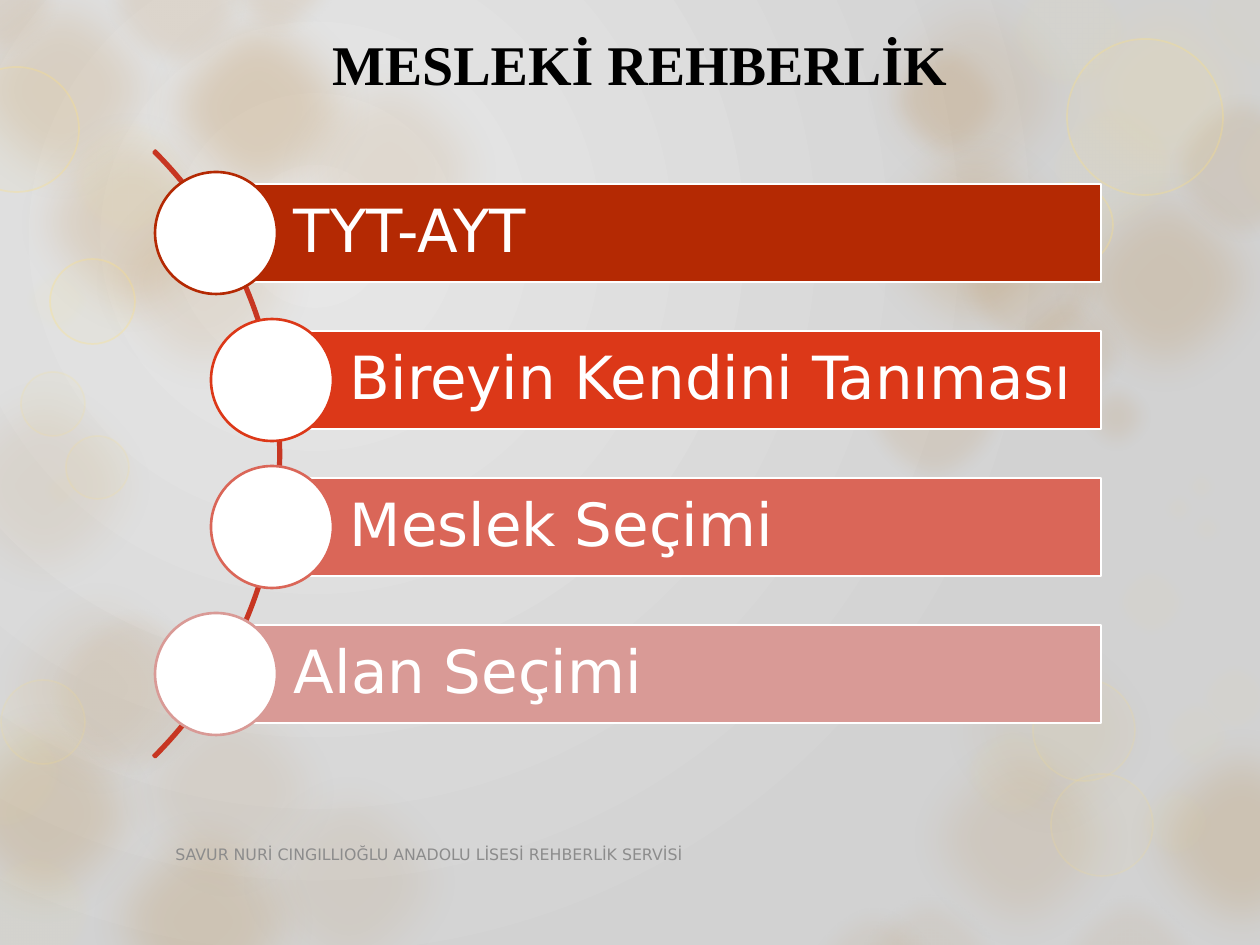
from lxml import etree
from pptx import Presentation
from pptx.dml.color import RGBColor
from pptx.enum.shapes import MSO_SHAPE
from pptx.enum.text import MSO_ANCHOR, PP_ALIGN
from pptx.oxml import parse_xml
from pptx.oxml.ns import qn
from pptx.util import Pt

EMU_PER_PX = 914400 / 126
DRAWING_NS = "http://schemas.openxmlformats.org/drawingml/2006/main"
BODY_FONT = "DejaVu Sans"
COLORS = {
    "light": "E7E7E7", "dark": "D2D2D2", "brown": "AE6D11", "gold": "FFE281",
    "white": "FFFFFF", "black": "000000", "footer": "8C8C8C", "arc": "C73622",
    "rust": "B42903", "red": "DC3818", "coral": "DA6658", "rose": "D99A96",
}
TOPICS = [
    ("TYT-AYT", "rust", 216),
    ("Bireyin Kendini Tanıması", "red", 272),
    ("Meslek Seçimi", "coral", 272),
    ("Alan Seçimi", "rose", 216),
]
BAR_RIGHT, BAR_HEIGHT, FIRST_CENTER, TOPIC_STEP, DISC = 1101, 98, 233, 147, 122

LARGE_GLOWS = [
    (-32, 557, 8), (72, 151, 10), (258, 39, 10), (72, 790, 16), (-70, -41, 14),
    (127, -23, 20), (0, 91, 15), (843, -37, 10), (1033, 151, 15),
    (1110, 708, 16), (919, 601, 5), (-86, 682, 16), (97, 660, 8),
    (843, 108, 15), (890, 708, 10), (218, 751, 8), (-87, 355, 8),
]
SMALL_GLOWS = [
    (850, 330, 168, 10), (1157, 82, 173, 10), (874, 29, 144, 10),
    (948, 200, 168, 10), (994, 282, 144, 10), (1067, 367, 100, 10),
    (94, -82, 165, 10), (207, -93, 143, 10), (-72, -73, 144, 10),
    (38, 596, 193, 6), (795, 895, 160, 6), (844, 883, 171, 6),
    (1045, 883, 168, 6),
]
GOLD_GLOWS = [
    (-26, 850, 123), (-56, 711, 124), (66, 116, 126), (21, 265, 72),
    (1007, -30, 125), (1201, -50, 125), (1229, 103, 125), (1046, 101, 134),
    (961, 722, 102), (1134, 781, 83), (1113, 564, 77), (1159, 697, 77),
    (1197, 660, 77), (1181, 466, 42), (1157, 488, 42), (1186, 508, 42),
    (38, 466, 49),
]
GOLD_RINGS = [
    (1, 680, 84, 15), (-46, 67, 125, 30), (50, 259, 85, 30),
    (1067, 39, 156, 30), (1029, 183, 84, 30), (1051, 774, 102, 15),
    (1033, 679, 102, 15), (21, 372, 64, 15), (66, 436, 63, 15),
]


def px(length):
    return round(length * EMU_PER_PX)


def rgb(name):
    return RGBColor.from_string(COLORS[name])


def set_alpha(fill_owner, percent):
    color = next(fill_owner.iter(qn("a:srgbClr")))
    etree.SubElement(color, qn("a:alpha")).set("val", str(percent * 1000))


def add_figure(slide, preset, box, fill=None, line=None, line_width=1.5):
    figure = slide.shapes.add_shape(preset, *map(px, box))
    figure.shadow.inherit = False
    if fill:
        figure.fill.solid()
        figure.fill.fore_color.rgb = rgb(fill)
    else:
        figure.fill.background()
    if line:
        figure.line.color.rgb = rgb(line)
        figure.line.width = Pt(line_width)
    else:
        figure.line.fill.background()
    return figure


def add_glow(slide, left, top, size, color, percent, softness):
    glow = add_figure(slide, MSO_SHAPE.OVAL, (left, top, size, size), color)
    properties = glow.element.spPr
    set_alpha(properties.find(qn("a:solidFill")), percent)
    soft_edge = etree.SubElement(properties.find(qn("a:effectLst")), qn("a:softEdge"))
    soft_edge.set("rad", str(Pt(softness)))


def add_ring(slide, left, top, size, percent):
    ring = add_figure(slide, MSO_SHAPE.OVAL, (left, top, size, size), "gold", "gold", 1)
    set_alpha(ring.element.spPr.find(qn("a:solidFill")), 5)
    set_alpha(ring.element.spPr.find(qn("a:ln")), percent)


def write_text(frame, text, font_name, size, color, anchor, bold=False):
    frame.word_wrap = True
    frame.vertical_anchor = anchor
    frame.text = text
    paragraph = frame.paragraphs[0]
    paragraph.alignment = PP_ALIGN.LEFT
    paragraph.font.name = font_name
    paragraph.font.size = Pt(size)
    paragraph.font.bold = bold
    paragraph.font.color.rgb = rgb(color)
    return paragraph


def set_background(slide):
    slide.background.fill.solid()
    solid = next(slide.background.fill._xPr.iter(qn("a:solidFill")))
    gradient = parse_xml(
        f'<a:gradFill xmlns:a="{DRAWING_NS}" rotWithShape="1"><a:gsLst>'
        f'<a:gs pos="0"><a:srgbClr val="{COLORS["light"]}"/></a:gs>'
        f'<a:gs pos="100000"><a:srgbClr val="{COLORS["dark"]}"/></a:gs></a:gsLst>'
        '<a:path path="circle"><a:fillToRect l="50000" t="50000" r="100000" b="100000"/>'
        '</a:path></a:gradFill>'
    )
    solid.getparent().replace(solid, gradient)


def add_backdrop(slide):
    for left, top, percent in LARGE_GLOWS:
        add_glow(slide, left, top, 263, "brown", percent, 25)
    add_glow(slide, 1033, -41, 263, "gold", 10, 25)
    for left, top, size, percent in SMALL_GLOWS:
        add_glow(slide, left, top, size, "brown", percent, 12)
    for left, top, size in GOLD_GLOWS:
        add_glow(slide, left, top, size, "gold", 5, 5)
    for ring in GOLD_RINGS:
        add_ring(slide, *ring)


def add_title(slide):
    title = slide.shapes.title
    title.left, title.top, title.width, title.height = map(px, (278, 0, 982, 127))
    title.text_frame.margin_left = px(54)
    write_text(title.text_frame, "MESLEKİ REHBERLİK", "Times New Roman", 32,
               "black", MSO_ANCHOR.MIDDLE, True)
    slide.shapes.element.append(title.element)


def add_footer(slide):
    footer = slide.shapes.add_textbox(*map(px, (163, 820, 725, 50)))
    write_text(footer.text_frame, "SAVUR NURİ CINGILLIOĞLU ANADOLU LİSESİ REHBERLİK SERVİSİ",
               BODY_FONT, 9, "footer", MSO_ANCHOR.BOTTOM)


def add_arc(slide):
    arc = add_figure(slide, MSO_SHAPE.BLOCK_ARC, (-577, 25, 858, 858), line="arc")
    for index, value in enumerate((189, 27, 0.003)):
        arc.adjustments[index] = value


def add_topic(slide, text, color, left, center):
    box = (left, center - BAR_HEIGHT / 2, BAR_RIGHT - left, BAR_HEIGHT)
    bar = add_figure(slide, MSO_SHAPE.RECTANGLE, box, color, "white")
    frame = bar.text_frame
    frame.margin_left = px(78)
    frame.margin_right = frame.margin_top = frame.margin_bottom = px(11)
    paragraph = write_text(frame, text, BODY_FONT, 34, "white", MSO_ANCHOR.MIDDLE)
    paragraph.line_spacing = 0.9
    disc_box = (left - DISC / 2, center - DISC / 2, DISC, DISC)
    add_figure(slide, MSO_SHAPE.OVAL, disc_box, "white", color)


def main():
    presentation = Presentation()
    presentation.slide_width, presentation.slide_height = px(1260), px(945)
    slide = presentation.slides.add_slide(presentation.slide_layouts[5])
    set_background(slide)
    add_backdrop(slide)
    add_footer(slide)
    add_title(slide)
    add_arc(slide)
    for index, (text, color, left) in enumerate(TOPICS):
        add_topic(slide, text, color, left, FIRST_CENTER + index * TOPIC_STEP)
    presentation.save("out.pptx")


if __name__ == "__main__":
    main()
